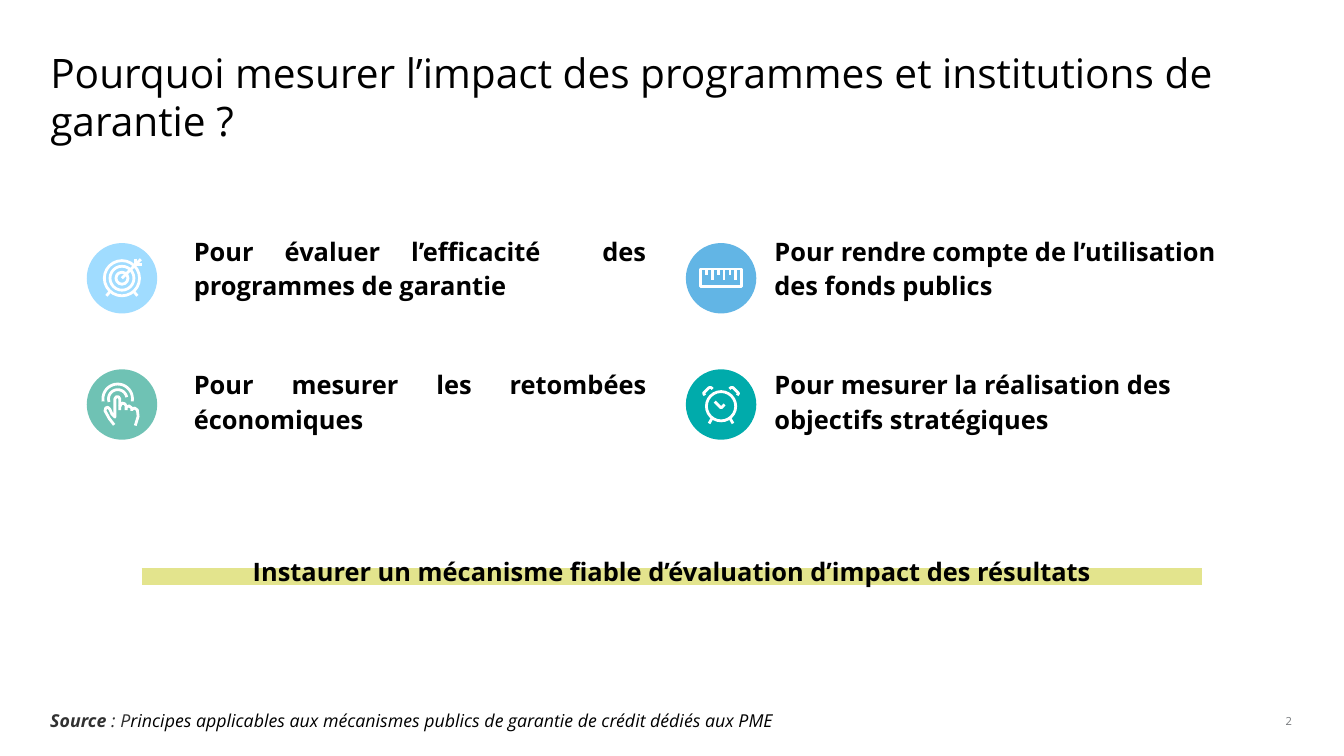
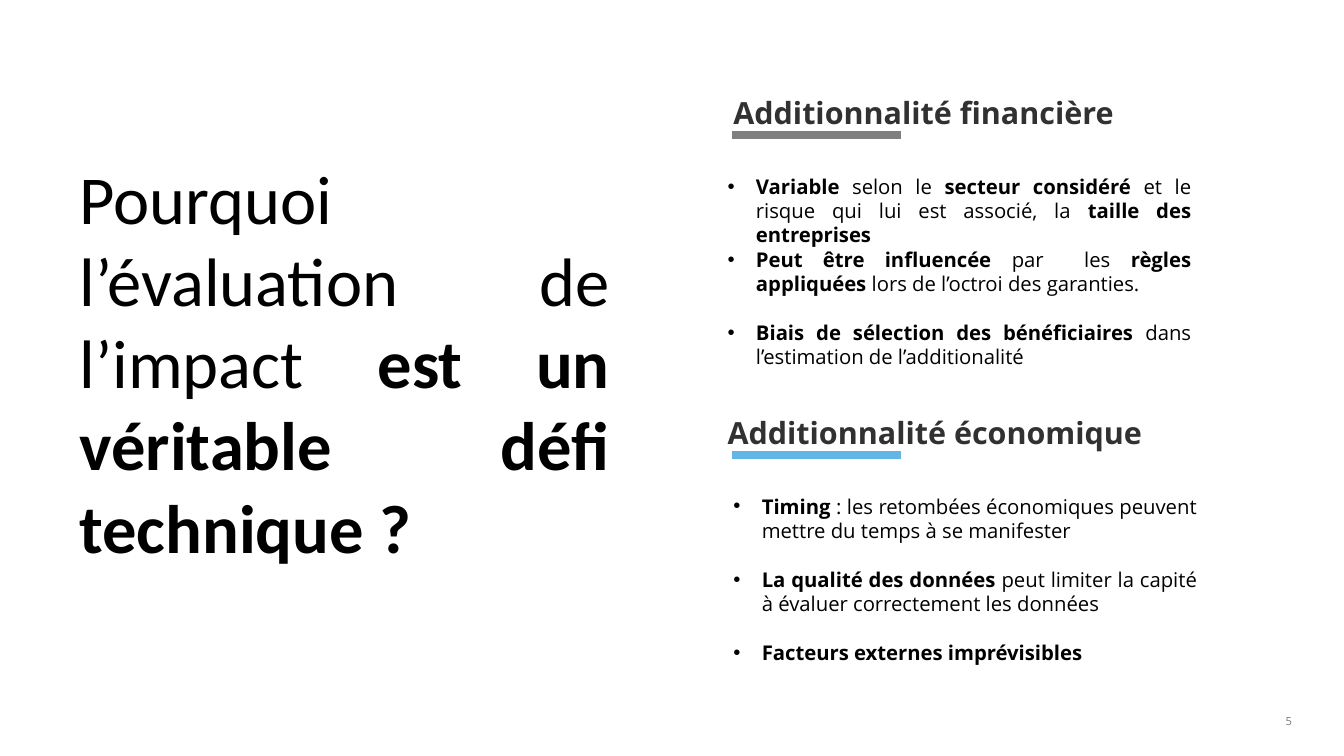
import math
from collections import namedtuple

from lxml import etree
from pptx import Presentation
from pptx.dml.color import RGBColor
from pptx.enum.shapes import MSO_CONNECTOR, MSO_SHAPE
from pptx.enum.text import MSO_ANCHOR, PP_ALIGN
from pptx.oxml.ns import qn
from pptx.util import Inches, Pt

LEFT, CENTER, RIGHT, JUSTIFY = PP_ALIGN.LEFT, PP_ALIGN.CENTER, PP_ALIGN.RIGHT, PP_ALIGN.JUSTIFY
TOP, MIDDLE = MSO_ANCHOR.TOP, MSO_ANCHOR.MIDDLE
OVAL, STRAIGHT = MSO_SHAPE.OVAL, MSO_CONNECTOR.STRAIGHT

# Shared look
SLIDE_W, SLIDE_H = Inches(14.7), Inches(8.27)
FONT, HEADLINE_FONT = "Open Sans", "Calibri"
BLACK, DARK, MUTED, WHITE = "000000", "313131", "75787B", "FFFFFF"
SKY, BLUE, GREEN, TEAL = "A0DCFF", "62B5E5", "6FC2B4", "00ABAB"
GREY, LIME = "808080", "E3E48D"
BULLET_INDENT = Inches(0.31)
BLANK_LINE = 19.25
ICON_STROKE = 2.2

Box = namedtuple("Box", "x y w h")


def share(x, y, w, h):
    """Box given in percent of the slide's width and height."""
    return Box(*(round(size * percent / 100) for size, percent in
                 zip((SLIDE_W, SLIDE_H) * 2, (x, y, w, h))))


def within(box, x, y, w, h):
    """Box given in shares of another box."""
    return Box(round(box.x + x * box.w), round(box.y + y * box.h),
               round(w * box.w), round(h * box.h))


def rgb(colour):
    return RGBColor.from_string(colour)


def format_runs(paragraph, size, colour=BLACK, bold=False, italic=False, font=FONT):
    for run in paragraph.runs:
        run.font.name, run.font.size = font, Pt(size)
        run.font.bold, run.font.italic = bold, italic
        run.font.color.rgb = rgb(colour)


def add_text(slide, box, text, size, align=LEFT, anchor=TOP, margin=0.0,
             spacing=1.0, **style):
    frame = slide.shapes.add_textbox(*box).text_frame
    frame.word_wrap, frame.vertical_anchor = True, anchor
    frame.margin_left = frame.margin_right = Inches(margin)
    frame.margin_top = frame.margin_bottom = Inches(margin / 2)
    frame.text = text
    paragraph = frame.paragraphs[0]
    paragraph.alignment, paragraph.line_spacing = align, spacing
    format_runs(paragraph, size, **style)
    return frame


def add_runs(paragraph, parts, size, **style):
    """Each part is (text, bold)."""
    for text, _ in parts:
        paragraph.add_run().text = text
    format_runs(paragraph, size, **style)
    for run, (_, bold) in zip(paragraph.runs, parts):
        run.font.bold = bold


def add_rule(slide, x1, x2, y, colour, width):
    rule = slide.shapes.add_connector(STRAIGHT, round(x1), round(y), round(x2), round(y))
    rule.line.color.rgb, rule.line.width = rgb(colour), Pt(width)
    etree.SubElement(rule._element.spPr, qn("a:effectLst"))


def add_disc(slide, box, fill=None, line=None):
    disc = slide.shapes.add_shape(OVAL, *box)
    disc.shadow.inherit = False
    if fill:
        disc.fill.solid()
        disc.fill.fore_color.rgb = rgb(fill)
    else:
        disc.fill.background()
    if line:
        disc.line.color.rgb, disc.line.width = rgb(line), Pt(ICON_STROKE)
    else:
        disc.line.fill.background()


# Icon drawings, in percent of the disc they sit on
def arc(cx, cy, r, start, end):
    return [(cx + r * math.cos(math.radians(a)), cy + r * math.sin(math.radians(a)))
            for a in range(start, end + 1, 10)]


def mirrored(strokes):
    return strokes + [[(100 - x, y) for x, y in stroke] for stroke in strokes]


TARGET = dict(
    rings=[(50, 50, r) for r in (25, 17, 8.5)],
    strokes=mirrored([[(33, 69), (28, 75)]]) + [
        [(50, 50), (77, 23)], [(69, 22), (69, 31), (78, 31)]])
RULER = dict(
    rings=[],
    strokes=[[(21, 37), (79, 37), (79, 62), (21, 62), (21, 37)]]
    + [[(29 + 8.4 * i, 37), (29 + 8.4 * i, 52 if i % 2 else 46)] for i in range(6)])
TOUCH = dict(
    rings=[],
    strokes=[
        arc(44, 42, 21, 170, 370), arc(44, 42, 13, 160, 350),
        [(39, 79), (32, 70), (26, 59), (27, 55), (30, 54), (33, 57), (36, 64), (40, 68),
         (40, 42), (42, 39), (45, 39), (47, 42), (47, 58)],
        [(47, 53), (50, 48), (54, 49), (56, 52), (56, 58)],
        [(56, 54), (60, 52), (64, 55), (64, 59)],
        [(64, 57), (68, 55), (72, 58), (73, 67), (69, 80)]])
ALARM = dict(
    rings=[(50, 52.5, 20.8)],
    strokes=mirrored([[(37, 70), (33, 77)],
                      [(27, 37), (25, 34), (33, 26), (36, 26), (38, 28)]])
    + [[(41, 46), (50, 55), (55, 50)]])


def add_icon(slide, box, colour, rings, strokes):
    add_disc(slide, box, fill=colour)
    for cx, cy, r in rings:
        add_disc(slide, within(box, (cx - r) / 100, (cy - r) / 100, r / 50, r / 50),
                 line=WHITE)
    placed = [[(round(box.x + x * box.w / 100), round(box.y + y * box.h / 100))
               for x, y in stroke] for stroke in strokes]
    builder = slide.shapes.build_freeform(*placed[0][0], scale=1.0)
    for i, (start, *rest) in enumerate(placed):
        if i:
            builder.move_to(*start)
        builder.add_line_segments(rest, close=False)
    drawing = builder.convert_to_shape()
    drawing.shadow.inherit = False
    drawing.fill.background()
    drawing.line.color.rgb, drawing.line.width = rgb(WHITE), Pt(ICON_STROKE)


def new_slide(prs, number):
    slide = prs.slides.add_slide(prs.slide_layouts[6])
    add_text(slide, share(93.61, 94.44, 2.52, 1.81), number, 8.8, RIGHT, colour=MUTED)
    return slide


# Slide with the four reasons
REASONS = [
    [("Pour évaluer l’efficacité  des programmes de garantie", SKY, TARGET),
     ("Pour rendre compte de l’utilisation des fonds publics", BLUE, RULER)],
    [("Pour mesurer les retombées économiques", GREEN, TOUCH),
     ("Pour mesurer la réalisation des objectifs stratégiques", TEAL, ALARM)]]


def add_reasons(slide, box):
    table = slide.shapes.add_table(2, 2, *box).table
    table.first_row = table.horz_banding = False
    first_row = round(box.h * 0.425)
    table.rows[0].height, table.rows[1].height = first_row, box.h - first_row
    disc = round(SLIDE_W * 0.0524)
    for row, (reasons, icon_y) in enumerate(zip(REASONS, (0.116, 0.589))):
        for col, ((text, colour, icon), icon_x) in enumerate(zip(reasons, (0.018, 0.534))):
            cell = table.cell(row, col)
            cell.fill.background()
            cell.vertical_anchor = MIDDLE
            cell.margin_left, cell.margin_right = round(SLIDE_W * 0.0952), 0
            cell.text = text
            paragraph = cell.text_frame.paragraphs[0]
            paragraph.alignment = LEFT if col else JUSTIFY
            format_runs(paragraph, 20, bold=True)
            corner = within(box, icon_x, icon_y, 0, 0)
            add_icon(slide, Box(corner.x, corner.y, disc, disc), colour, **icon)


def add_banner(slide, box, text):
    add_rule(slide, box.x, box.x + box.w, box.y + 0.61 * box.h, LIME, 13)
    add_text(slide, box, text, 20, CENTER, MIDDLE, 0.1, 1.06, bold=True)


def add_source(slide, box):
    frame = add_text(slide, box, "", 14)
    paragraph = frame.paragraphs[0]
    add_runs(paragraph, [
        ("Source", True), (" : P", False),
        ("rincipes applicables aux mécanismes publics de garantie de crédit dédiés aux PME",
         False)], 14, colour=DARK, italic=True)
    paragraph.runs[-1].font.color.rgb = rgb(BLACK)


def reasons_slide(prs):
    slide = new_slide(prs, "2")
    add_text(slide, share(3.74, 6.29, 92.52, 13.06),
             "Pourquoi mesurer l’impact des programmes et institutions de garantie ?", 32)
    add_source(slide, share(3.74, 93.83, 76.26, 2.9))
    add_reasons(slide, share(4.9, 28.05, 86.39, 35.31))
    add_banner(slide, share(10.54, 71.34, 78.91, 8.1),
               "Instaurer un mécanisme fiable d’évaluation d’impact des résultats")


# Slide with the technical challenge; each bullet is (space before, parts)
FINANCIAL = [
    (0, [("Variable", True), (" selon le ", False), ("secteur considéré ", True),
         ("et le risque qui lui est associé, la ", False),
         ("taille des entreprises", True)]),
    (0, [("Peut être influencée ", True), ("par  les ", False),
         ("règles appliquées", True), (" lors de l’octroi des garanties.", False)]),
    (BLANK_LINE, [("Biais de sélection des bénéficiaires ", True),
                  ("dans l’estimation de l’additionalité", False)])]
ECONOMIC = [
    (0, [("Timing", True),
         (" : les retombées économiques peuvent mettre du temps à se manifester", False)]),
    (BLANK_LINE, [("La qualité des données ", True),
                  ("peut limiter la capité à évaluer correctement les données", False)]),
    (BLANK_LINE, [("Facteurs externes imprévisibles", True)])]


def add_bullets(slide, box, bullets):
    frame = add_text(slide, box, "", 16, margin=0.1)
    for i, (before, parts) in enumerate(bullets):
        paragraph = frame.add_paragraph() if i else frame.paragraphs[0]
        properties = paragraph._p.get_or_add_pPr()
        properties.set("marL", str(BULLET_INDENT))
        properties.set("indent", str(-BULLET_INDENT))
        etree.SubElement(properties, qn("a:buFont")).set("typeface", "Arial")
        etree.SubElement(properties, qn("a:buChar")).set("char", "•")
        paragraph.alignment = JUSTIFY
        if before:
            paragraph.space_before = Pt(before)
        add_runs(paragraph, parts, 16)


def add_section(slide, box, heading, colour, bullets, heading_shift, bullets_shift):
    add_rule(slide, box.x + 0.028 * box.w, box.x + 0.374 * box.w, box.y + 0.16 * box.h,
             colour, 6)
    add_text(slide, within(box, heading_shift, 0, 0.92, 0.16), heading, 24, margin=0.1,
             colour=DARK, bold=True)
    add_bullets(slide, within(box, bullets_shift, 0.28, 0.99, 0.72), bullets)


def challenge_slide(prs):
    slide = new_slide(prs, "5")
    question = add_text(slide, share(5.92, 20.56, 39.46, 48.61), "", 54, JUSTIFY)
    add_runs(question.paragraphs[0], [("Pourquoi l’évaluation de l’impact ", False),
                                      ("est un véritable défi technique ?", True)],
             54, font=HEADLINE_FONT)
    add_section(slide, share(53.47, 11.85, 36.19, 37.73), "Additionnalité financière",
                GREY, FINANCIAL, 0.012, 0)
    add_section(slide, share(53.47, 54.17, 36.19, 37.73), "Additionnalité économique",
                BLUE, ECONOMIC, 0, 0.012)


def main():
    prs = Presentation()
    prs.slide_width, prs.slide_height = SLIDE_W, SLIDE_H
    reasons_slide(prs)
    challenge_slide(prs)
    prs.save("out.pptx")


if __name__ == "__main__":
    main()
